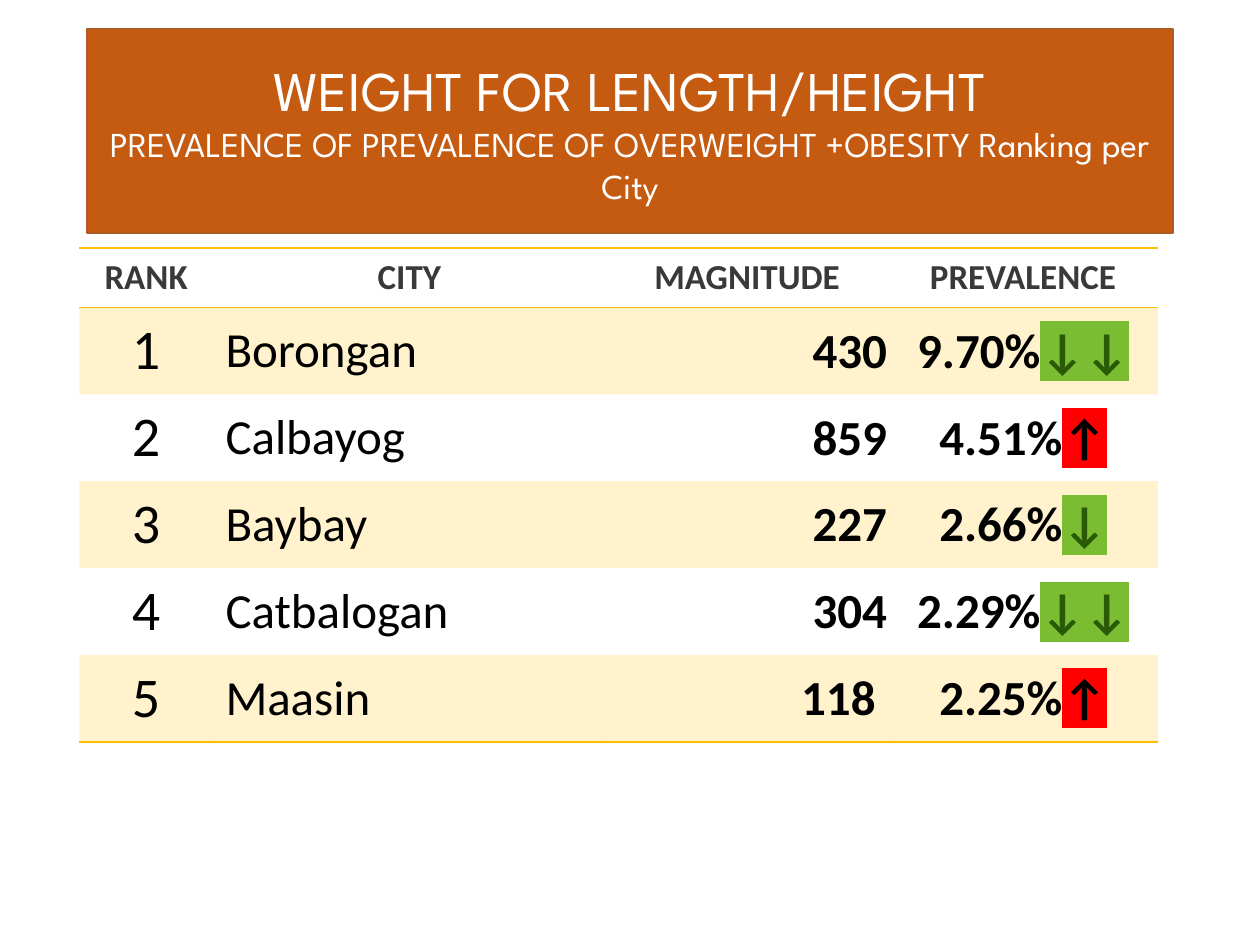
from lxml import etree
from pptx import Presentation, util as u
from pptx.dml.color import RGBColor
from pptx.enum import text as t
from pptx.oxml.ns import qn

WIDTH, HEIGHT = u.Inches(10), u.Inches(7.5)
ORANGE, GOLD, WHITE, BLACK, GREY = "C55A11", "FFC000", "FFFFFF", "000000", "3B3838"
NO_GRID_STYLE = "{2D5ABB26-0587-4C30-8999-92F81FD0307C}"
LEFT, CENTER, RIGHT = t.PP_ALIGN.LEFT, t.PP_ALIGN.CENTER, t.PP_ALIGN.RIGHT

HEADINGS = ["RANK", "CITY", "MAGNITUDE", "PREVALENCE"]
CITIES = [
    ("Borongan", "430", "9.70%", "↓↓"),
    ("Calbayog", "859", "4.51%", "↑"),
    ("Baybay", "227", "2.66%", "↓"),
    ("Catbalogan", "304", "2.29%", "↓↓"),
    ("Maasin", "118", "2.25%", "↑"),
]
TREND_COLOURS = {"↓": ("2A5A06", "7ABC32"), "↑": (BLACK, "FF0000")}
COLUMN_WIDTHS = [1.06, 3.12, 2.24, 2.14]
HEADER_HEIGHT, ROW_HEIGHT = 0.47, 0.69


def colour(value):
    return RGBColor.from_string(value)


def add_colour(parent, value):
    return etree.SubElement(parent, qn("a:srgbClr"), val=value)


def write(paragraph, content, size=28, font="Calibri", ink=BLACK, bold=False,
          align=LEFT, highlight=None):
    paragraph.alignment = align
    run = paragraph.add_run()
    run.text = content
    run.font.size, run.font.name, run.font.bold = u.Pt(size), font, bold
    run.font.color.rgb = colour(ink)
    if highlight:
        marker = etree.Element(qn("a:highlight"))
        add_colour(marker, highlight)
        run.font._element.find(qn("a:solidFill")).addnext(marker)


def rule_cell(cell, side, width=1):
    """Draw a gold line on one side of a cell: lnT or lnB."""
    line = etree.SubElement(cell._tc.get_or_add_tcPr(), qn("a:" + side),
                            w=str(u.Pt(width)))
    add_colour(etree.SubElement(line, qn("a:solidFill")), GOLD)


def tint_cell(cell):
    cell.fill.solid()
    cell.fill.fore_color.rgb = colour(GOLD)
    gold = cell._tc.tcPr.find(qn("a:solidFill")).find(qn("a:srgbClr"))
    etree.SubElement(gold, qn("a:alpha"), val="20000")


def tighten(cell):
    cell.margin_left = cell.margin_right = cell.margin_top = u.Inches(0.01)
    cell.margin_bottom = 0


def place_banner(slide, left, top, width, height):
    banner = slide.shapes.title
    banner.left, banner.top, banner.width, banner.height = left, top, width, height
    banner.fill.solid()
    banner.fill.fore_color.rgb = colour(ORANGE)
    banner.line.color.rgb = colour("AF5C24")
    banner.line.width = u.Pt(1)
    frame = banner.text_frame
    frame.word_wrap = True
    frame.auto_size = t.MSO_AUTO_SIZE.NONE
    frame.vertical_anchor = t.MSO_ANCHOR.MIDDLE
    style = dict(font="League Spartan", ink=WHITE, align=CENTER)
    write(frame.paragraphs[0], "WEIGHT FOR LENGTH/HEIGHT", size=32, **style)
    write(frame.add_paragraph(),
          "PREVALENCE OF PREVALENCE OF OVERWEIGHT +OBESITY Ranking per City",
          size=20, **style)


def fill_city_row(cells, rank, city, magnitude, prevalence, trend):
    rank_text, city_text, magnitude_text, prevalence_text = (
        cell.text_frame.paragraphs[0] for cell in cells)
    write(rank_text, str(rank), size=32, align=CENTER)
    write(city_text, city)
    write(magnitude_text, magnitude, bold=True, align=RIGHT)
    write(prevalence_text, prevalence, bold=True, align=CENTER)
    ink, highlight = TREND_COLOURS[trend[0]]
    write(prevalence_text, trend, bold=True, align=CENTER, ink=ink, highlight=highlight)


def place_ranking(slide, left, top, width, height):
    table = slide.shapes.add_table(len(CITIES) + 1, len(HEADINGS),
                                   left, top, width, height).table
    table._tbl.tblPr.find(qn("a:tableStyleId")).text = NO_GRID_STYLE
    for column, share in zip(table.columns, COLUMN_WIDTHS):
        column.width = int(width * share / sum(COLUMN_WIDTHS))
    for number, row in enumerate(table.rows):
        row.height = u.Inches(ROW_HEIGHT if number else HEADER_HEIGHT)
        cells = list(row.cells)
        is_last = number == len(CITIES)
        for cell in cells:
            cell.vertical_anchor = t.MSO_ANCHOR.MIDDLE
            if number == 0:
                rule_cell(cell, "lnT")
            if number == 0 or is_last:
                rule_cell(cell, "lnB")
            if number % 2:
                tint_cell(cell)
            else:
                cell.fill.background()
        if number == 0:
            for cell, heading in zip(cells, HEADINGS):
                write(cell.text_frame.paragraphs[0], heading, size=20, ink=GREY,
                      bold=True, align=CENTER)
            continue
        if not is_last:
            for cell in cells[2:]:
                tighten(cell)
        fill_city_row(cells, number, *CITIES[number - 1])


def main():
    deck = Presentation()
    deck.slide_width, deck.slide_height = WIDTH, HEIGHT
    slide = deck.slides.add_slide(deck.slide_layouts[5])
    place_ranking(slide, u.Inches(0.63), u.Inches(1.97), u.Inches(sum(COLUMN_WIDTHS)),
                  u.Inches(HEADER_HEIGHT + ROW_HEIGHT * len(CITIES)))
    place_banner(slide, u.Inches(0.69), u.Inches(0.23), u.Inches(8.62), u.Inches(1.62))
    deck.save("out.pptx")


if __name__ == "__main__":
    main()
